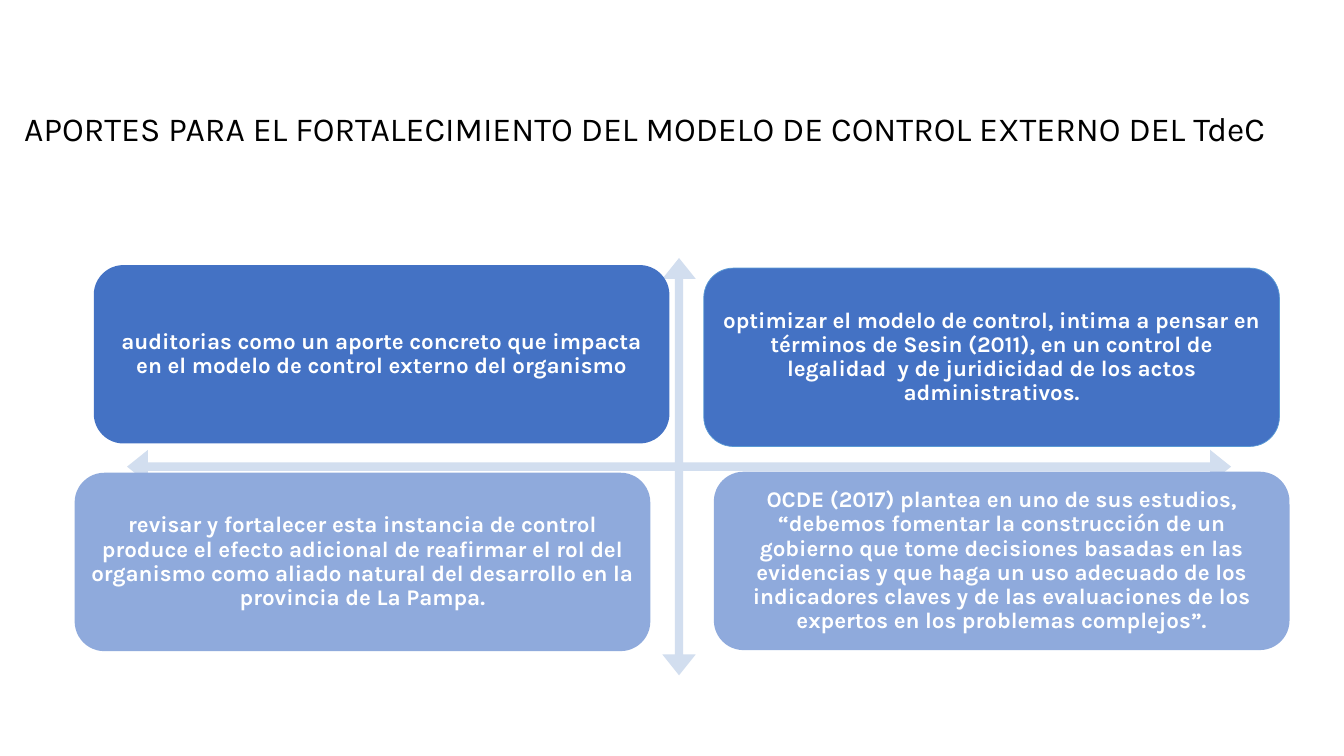
import pptx
import pptx.util
import pptx.dml.color
import pptx.enum.shapes
import pptx.enum.text
from dataclasses import dataclass


@dataclass(frozen=True)
class Theme:
    font: str = "Karla"
    title_size: int = 24
    body_size: int = 16
    ink: str = "000000"
    paper: str = "FFFFFF"
    axes: str = "D2DEEF"
    upper: str = "4472C4"
    lower: str = "8FAADC"
    outline: str = "5B9BD5"


THEME = Theme()
SLIDE_WIDTH, SLIDE_HEIGHT = 13.33, 7.5
CARD_WIDTH, CARD_HEIGHT = 5.71, 1.77

QUADRANTS = [
    (0.93, 2.63, THEME.upper, None,
     "auditorias como un aporte concreto que impacta en el modelo de control externo del organismo"),
    (6.98, 2.66, THEME.upper, THEME.outline,
     "optimizar el modelo de control, intima a pensar en términos de Sesin (2011), en un control de "
     "legalidad  y de juridicidad de los actos administrativos."),
    (0.74, 4.69, THEME.lower, None,
     "revisar y fortalecer esta instancia de control produce el efecto adicional de reafirmar el rol "
     "del organismo como aliado natural del desarrollo en la provincia de La Pampa."),
    (7.08, 4.68, THEME.lower, None,
     "OCDE (2017) plantea en uno de sus estudios, “debemos fomentar la construcción de un gobierno "
     "que tome decisiones basadas en las evidencias y que haga un uso adecuado de los indicadores "
     "claves y de las evaluaciones de los expertos en los problemas complejos”."),
]


def color(value):
    return pptx.dml.color.RGBColor.from_string(value)


def box(left, top, width, height):
    return [pptx.util.Inches(length) for length in (left, top, width, height)]


def write(frame, text, *, size, ink, bold=False, align="LEFT", inset=(0.1, 0.05), after=0):
    frame.word_wrap = True
    frame.auto_size = pptx.enum.text.MSO_AUTO_SIZE.NONE
    frame.vertical_anchor = pptx.enum.text.MSO_ANCHOR.MIDDLE
    frame.margin_left = frame.margin_right = pptx.util.Inches(inset[0])
    frame.margin_top = frame.margin_bottom = pptx.util.Inches(inset[1])
    paragraph = frame.paragraphs[0]
    paragraph.alignment = getattr(pptx.enum.text.PP_ALIGN, align)
    paragraph.line_spacing = 0.9
    paragraph.space_after = pptx.util.Pt(after)
    run = paragraph.add_run()
    run.text = text
    run.font.name = THEME.font
    run.font.size = pptx.util.Pt(size)
    run.font.bold = bold
    run.font.color.rgb = color(ink)


def add_figure(slide, preset, place, fill, outline=None):
    figure = slide.shapes.add_shape(preset, *box(*place))
    figure.shadow.inherit = False
    figure.fill.solid()
    figure.fill.fore_color.rgb = color(fill)
    if outline:
        figure.line.color.rgb = color(outline)
        figure.line.width = pptx.util.Pt(0.5)
    else:
        figure.line.fill.background()
    return figure


def add_title(slide, text):
    title = slide.shapes.title
    title.left, title.top, title.width, title.height = box(0.14, 0.8, SLIDE_WIDTH - 0.14, 1)
    write(title.text_frame, text, size=THEME.title_size, ink=THEME.ink)


def add_axes(slide):
    axes = add_figure(slide, pptx.enum.shapes.MSO_SHAPE.QUAD_ARROW,
                      (1.26, 2.56, 10.95, 4.14), THEME.axes)
    for index, share in enumerate((0.02, 0.04, 0.05)):
        axes.adjustments[index] = share


def add_quadrant(slide, left, top, fill, outline, text):
    card = add_figure(slide, pptx.enum.shapes.MSO_SHAPE.ROUNDED_RECTANGLE,
                      (left, top, CARD_WIDTH, CARD_HEIGHT), fill, outline)
    write(card.text_frame, text, size=THEME.body_size, ink=THEME.paper, bold=True,
          align="CENTER", inset=(0.07, 0.07), after=5.6)


def main():
    deck = pptx.Presentation()
    deck.slide_width = pptx.util.Inches(SLIDE_WIDTH)
    deck.slide_height = pptx.util.Inches(SLIDE_HEIGHT)
    slide = deck.slides.add_slide(deck.slide_layouts.get_by_name("Title Only"))
    slide.background.fill.solid()
    slide.background.fill.fore_color.rgb = color(THEME.paper)
    add_title(slide, "APORTES PARA EL FORTALECIMIENTO DEL MODELO DE CONTROL EXTERNO DEL TdeC")
    add_axes(slide)
    for quadrant in QUADRANTS:
        add_quadrant(slide, *quadrant)
    deck.save("out.pptx")


if __name__ == "__main__":
    main()
